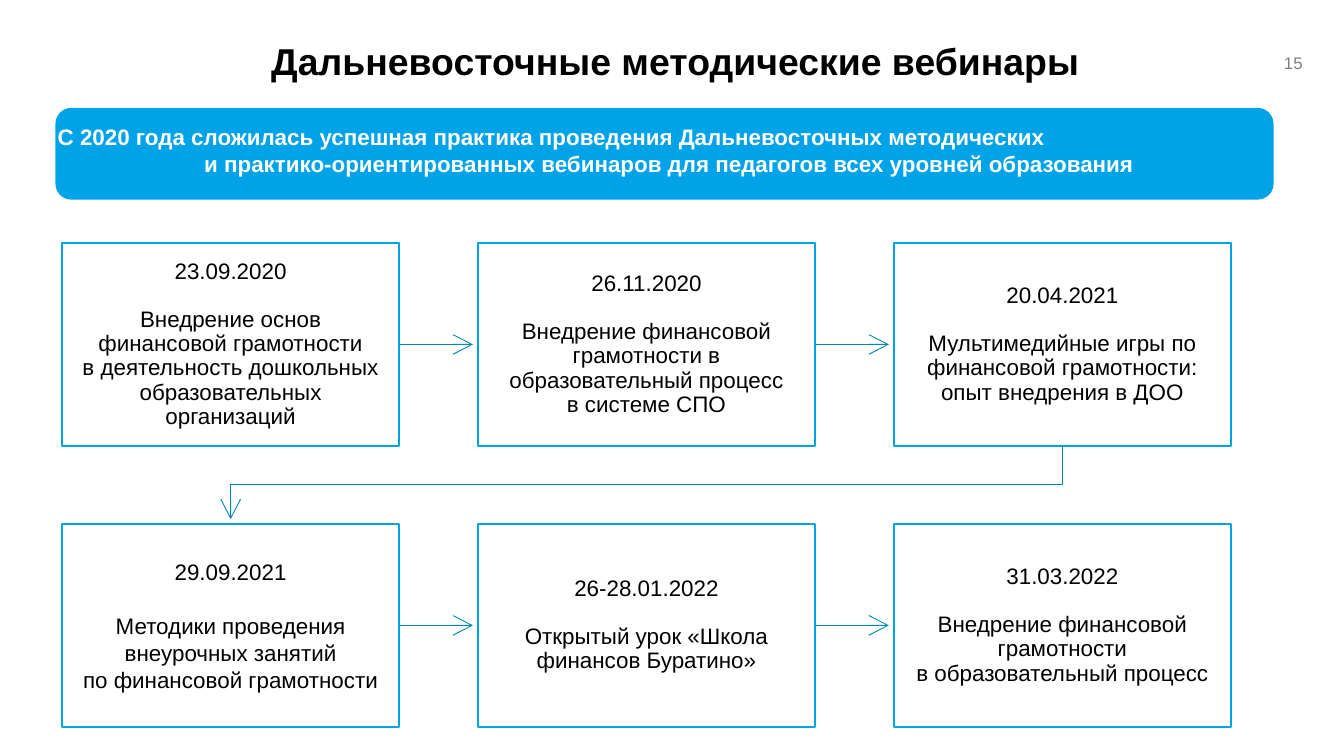
from lxml import etree
from pptx import Presentation
from pptx.dml.color import RGBColor
from pptx.enum.shapes import MSO_CONNECTOR, MSO_SHAPE
from pptx.enum.text import MSO_ANCHOR, PP_ALIGN
from pptx.oxml.ns import qn
from pptx.util import Pt

LEFT, CENTER, RIGHT = PP_ALIGN.LEFT, PP_ALIGN.CENTER, PP_ALIGN.RIGHT
TOP, MIDDLE = MSO_ANCHOR.TOP, MSO_ANCHOR.MIDDLE
COLORS = {
    "accent": "00A2E8",
    "arrow": "0087BA",
    "black": "000000",
    "white": "FFFFFF",
    "gray": "808080",
}

# Grid of webinar cards, in points
COLUMNS = 3
GRID_LEFT, GRID_TOP = 33.2, 130.3
CARD_WIDTH, CARD_HEIGHT = 180.8, 108.5
STEP_X, STEP_Y = 222.8, 150.5
ARROW_GAP = 2.6

# Date, description paragraphs, line spacing
WEBINARS = [
    ("23.09.2020", ["Внедрение основ финансовой грамотности",
                    "в деятельность дошкольных образовательных организаций"], 0.9),
    ("26.11.2020", ["Внедрение финансовой грамотности в образовательный процесс",
                    "в системе СПО"], 0.9),
    ("20.04.2021", ["Мультимедийные игры по финансовой грамотности: "
                    "опыт внедрения в ДОО"], 0.9),
    ("29.09.2021", ["Методики проведения внеурочных занятий",
                    "по финансовой грамотности"], 1.0),
    ("26-28.01.2022", ["Открытый урок «Школа финансов Буратино»"], 0.9),
    ("31.03.2022", ["Внедрение финансовой грамотности",
                    "в образовательный процесс"], 0.9),
]


def color(name):
    return RGBColor.from_string(COLORS[name])


def write(frame, texts, size=12, ink="black", bold=False, align=LEFT,
          anchor=MIDDLE, spacing=1.0, inset=None):
    """Fill a text frame with one paragraph per text and return them."""
    frame.word_wrap = True
    frame.vertical_anchor = anchor
    if inset is not None:
        frame.margin_left = frame.margin_right = Pt(inset)
        frame.margin_top = frame.margin_bottom = Pt(inset)
    paras = []
    for index, text in enumerate(texts):
        para = frame.add_paragraph() if index else frame.paragraphs[0]
        para.alignment = align
        para.line_spacing = spacing
        span = para.add_run()
        span.text = text
        span.font.name = "Arial"
        span.font.size = Pt(size)
        span.font.bold = bold
        span.font.color.rgb = color(ink)
        paras.append(para)
    return paras


def add_text(page, left, top, width, height, texts, **style):
    box = page.shapes.add_textbox(Pt(left), Pt(top), Pt(width), Pt(height))
    return write(box.text_frame, texts, **style)


def add_panel(page, kind, left, top, width, height, fill=None):
    panel = page.shapes.add_shape(kind, Pt(left), Pt(top), Pt(width), Pt(height))
    panel.shadow.inherit = False
    if fill:
        panel.fill.solid()
        panel.fill.fore_color.rgb = color(fill)
    else:
        panel.fill.background()
    panel.line.color.rgb = color("accent")
    panel.line.width = Pt(1)
    return panel


def style_arrow(arrow):
    arrow.line.color.rgb = color("arrow")
    arrow.line.width = Pt(0.5)
    properties = arrow._element.spPr
    etree.SubElement(properties.find(qn("a:ln")), qn("a:tailEnd"),
                     type="arrow", w="lg", len="lg")
    etree.SubElement(properties, qn("a:effectLst"))


def add_arrow(page, start, end, y):
    style_arrow(page.shapes.add_connector(
        MSO_CONNECTOR.STRAIGHT, Pt(start), Pt(y), Pt(end), Pt(y)))


def add_bent_arrow(page, points):
    corners = [(Pt(x), Pt(y)) for x, y in points]
    builder = page.shapes.build_freeform(*corners[0], scale=1.0)
    builder.add_line_segments(corners[1:], close=False)
    arrow = builder.convert_to_shape()
    arrow.fill.background()
    style_arrow(arrow)


def add_card(page, left, top, date, description, spacing):
    card = add_panel(page, MSO_SHAPE.RECTANGLE, left, top, CARD_WIDTH, CARD_HEIGHT)
    paras = write(card.text_frame, [date, *description], align=CENTER,
                  spacing=spacing, inset=6.6)
    paras[1].space_before = Pt(14.4 * spacing)


def add_banner(page):
    add_panel(page, MSO_SHAPE.ROUNDED_RECTANGLE, 30.2, 58.3, 651.6, 48.2, fill="accent")
    paras = add_text(
        page, 23.8, 62.6, 651.6, 36,
        ["С 2020 года сложилась успешная практика проведения Дальневосточных методических",
         "и практико-ориентированных вебинаров для педагогов всех уровней образования"],
        ink="white", bold=True, anchor=TOP)
    paras[1].alignment = CENTER
    # Shift the second line towards the middle of the banner
    paras[1]._p.get_or_add_pPr().set("marL", str(Pt(18)))


def add_webinars(page):
    for index, webinar in enumerate(WEBINARS):
        row, column = divmod(index, COLUMNS)
        left, top = GRID_LEFT + column * STEP_X, GRID_TOP + row * STEP_Y
        add_card(page, left, top, *webinar)
        if column < COLUMNS - 1:
            add_arrow(page, left + CARD_WIDTH, left + STEP_X - ARROW_GAP,
                      top + CARD_HEIGHT / 2)

    # Link from the end of the first row to the start of the second
    first_x = GRID_LEFT + CARD_WIDTH / 2
    last_x = first_x + (COLUMNS - 1) * STEP_X
    bottom, next_top = GRID_TOP + CARD_HEIGHT, GRID_TOP + STEP_Y
    middle = (bottom + next_top) / 2
    add_bent_arrow(page, [(last_x, bottom), (last_x, middle),
                          (first_x, middle), (first_x, next_top - ARROW_GAP)])


def main():
    deck = Presentation()
    deck.slide_width, deck.slide_height = Pt(720), Pt(405)
    page = deck.slides.add_slide(deck.slide_layouts[6])

    # Heading and page number
    add_text(page, 138.2, 17.3, 481.7, 33.8, ["Дальневосточные методические вебинары"],
             size=20, bold=True, spacing=0.9)
    add_text(page, 670.3, 23, 34.6, 21.6, ["15"], size=9, ink="gray", align=RIGHT)

    add_banner(page)
    add_webinars(page)
    deck.save("out.pptx")


if __name__ == "__main__":
    main()
